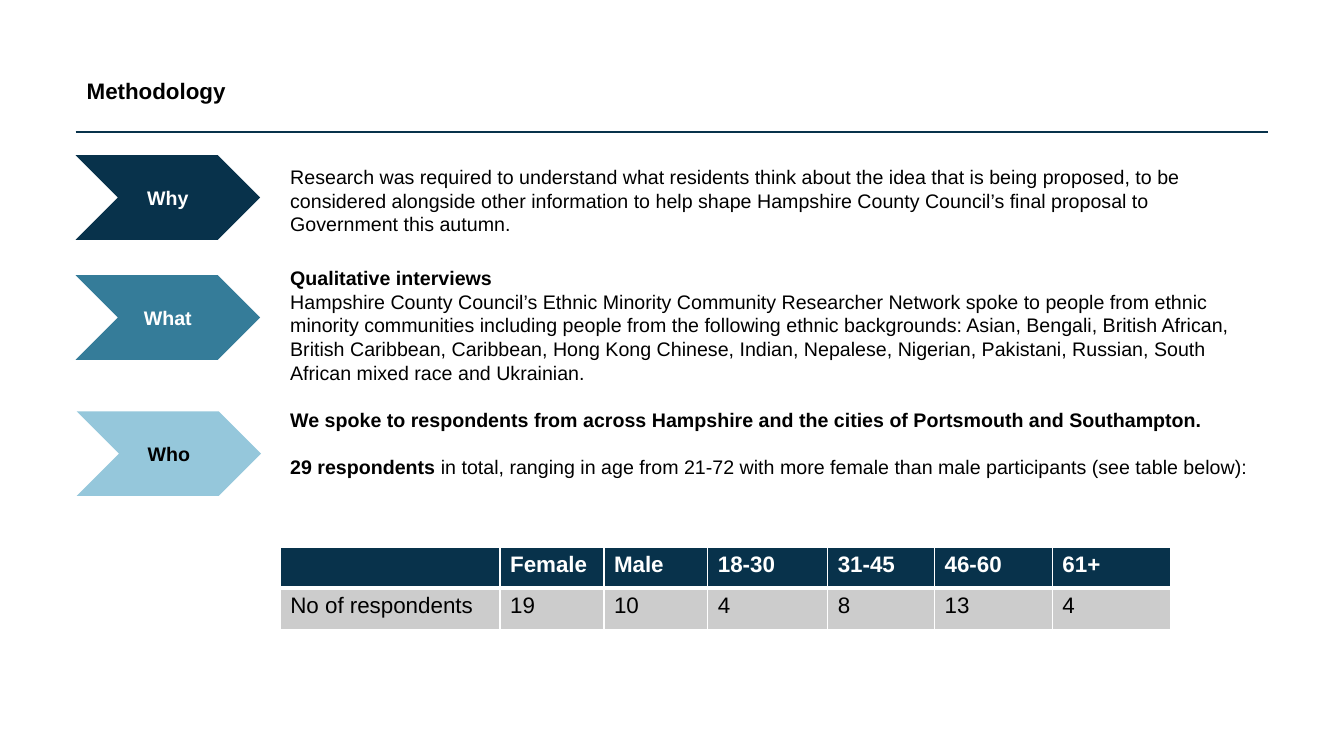
from lxml.etree import SubElement as Sub
from pptx import Presentation
from pptx.dml.color import RGBColor as RGB
from pptx.enum.shapes import MSO_CONNECTOR as Conn, MSO_SHAPE as Form
from pptx.enum.text import MSO_ANCHOR as Anchor, MSO_AUTO_SIZE as Auto, PP_ALIGN as Align
from pptx.oxml import parse_xml
from pptx.oxml.ns import nsdecls, qn
from pptx.util import Pt

NAVY = RGB(0x08, 0x32, 0x4B)
TEAL = RGB(0x35, 0x7C, 0x99)
SKY = RGB(0x95, 0xC7, 0xDB)
GREY = RGB(0xCC, 0xCC, 0xCC)
WHITE = RGB(0xFF, 0xFF, 0xFF)
BLACK = RGB(0, 0, 0)

STEPS = [("Why", 0, 0, NAVY, WHITE), ("What", 0, 85.7, TEAL, WHITE), ("Who", 0.7, 182.9, SKY, BLACK)]

NOTES = [
    (0, [("Research was required to understand what residents think about the idea that is being proposed, "
          "to be considered alongside other information to help shape Hampshire County Council’s final "
          "proposal to Government this autumn.", False)]),
    (21.8, [("Qualitative interviews", True)]),
    (0, [("Hampshire County Council’s Ethnic Minority Community Researcher Network spoke to people from "
          "ethnic minority communities including people from the following ethnic backgrounds: Asian, "
          "Bengali, British African, British Caribbean, Caribbean, Hong Kong Chinese, Indian, Nepalese, "
          "Nigerian, Pakistani, Russian, South African mixed race and Ukrainian.", False)]),
    (16.8, [("We spoke to respondents from across Hampshire and the cities of Portsmouth and Southampton.", True)]),
    (16.8, [("29 respondents", True),
            (" in total, ranging in age from 21-72 with more female than male participants "
             "(see table below):", False)]),
]

ROWS = [
    ["", "Female", "Male", "18-30", "31-45", "46-60", "61+"],
    ["No of respondents", "19", "10", "4", "8", "13", "4"],
]
COLS = [157, 74.2, 74.2, 85.7, 76.3, 84.2, 84.2]


def style(font, size, color, bold):
    look = {"name": "Arial", "size": Pt(size), "bold": bold}
    for key, value in look.items():
        setattr(font, key, value)
    font.color.rgb = color


def add_head(slide, x, y, w, h):
    title = slide.shapes.title
    place = {"left": x + 0.7, "top": y, "width": w, "height": h - 16.5}
    for key, value in place.items():
        setattr(title, key, Pt(value))
    frame = title.text_frame
    frame.text = "Methodology"
    frame.vertical_anchor = Anchor.BOTTOM
    para = frame.paragraphs[0]
    para.alignment = Align.LEFT
    para.line_spacing = 0.9
    style(para.font, 16, BLACK, True)
    rule = slide.shapes.add_connector(Conn.STRAIGHT, Pt(x), Pt(y + h), Pt(x + w), Pt(y + h))
    rule.line.color.rgb = NAVY
    rule.line.width = Pt(1.25)
    Sub(rule._element.spPr, qn("a:effectLst"))


def add_steps(slide, x, y, w, h):
    for name, dx, dy, fill, ink in STEPS:
        step = slide.shapes.add_shape(Form.CHEVRON, Pt(x + dx), Pt(y + dy), Pt(w), Pt(h))
        step.shadow.inherit = False
        step.fill.solid()
        step.fill.fore_color.rgb = fill
        step.line.fill.background()
        frame = step.text_frame
        frame.text = name
        frame.vertical_anchor = Anchor.MIDDLE
        para = frame.paragraphs[0]
        para.alignment = Align.CENTER
        style(para.font, 14, ink, True)


def add_notes(slide, x, y, w, h):
    frame = slide.shapes.add_textbox(Pt(x), Pt(y), Pt(w), Pt(h)).text_frame
    frame.word_wrap = True
    frame.auto_size = Auto.SHAPE_TO_FIT_TEXT
    for i, (gap, runs) in enumerate(NOTES):
        para = frame.add_paragraph() if i else frame.paragraphs[0]
        para.line_spacing = Pt(16.8)
        para.space_before = Pt(gap)
        for text, bold in runs:
            run = para.add_run()
            run.text = text
            style(run.font, 14, BLACK, bold)


def add_edges(cell, edges):
    props = cell._tc.get_or_add_tcPr()
    for i, (side, width) in enumerate(edges.items()):
        props.insert(i, parse_xml(
            f'<a:ln{side} {nsdecls("a")} w="{Pt(width)}"><a:solidFill>'
            f'<a:srgbClr val="{WHITE}"/></a:solidFill></a:ln{side}>'))


def add_grid(slide, x, y, w, h):
    grid = slide.shapes.add_table(len(ROWS), len(COLS), Pt(x), Pt(y), Pt(w), Pt(h)).table
    grid.horz_banding = False
    for col, width in zip(grid.columns, COLS):
        col.width = Pt(width)
    for r, texts in enumerate(ROWS):
        head = r == 0
        grid.rows[r].height = Pt(h / len(ROWS))
        for c, text in enumerate(texts):
            cell = grid.cell(r, c)
            cell.text = text
            cell.fill.solid()
            cell.fill.fore_color.rgb = NAVY if head else GREY
            style(cell.text_frame.paragraphs[0].font, 16, WHITE if head else BLACK, head)
            add_edges(cell, {"L": 1, "R": 1, "T": 1 if head else 3, "B": 3 if head else 1})


def main():
    deck = Presentation()
    deck.slide_width, deck.slide_height = Pt(960), Pt(540)
    slide = deck.slides.add_slide(deck.slide_layouts[5])
    add_head(slide, 54, 18, 851.8, 76.3)
    add_steps(slide, 54, 110.9, 131.8, 60.5)
    add_notes(slide, 200.2, 114.5, 705.6, 249.8)
    add_grid(slide, 200.2, 391, sum(COLS), 58.4)
    deck.save("out.pptx")


if __name__ == "__main__":
    main()
